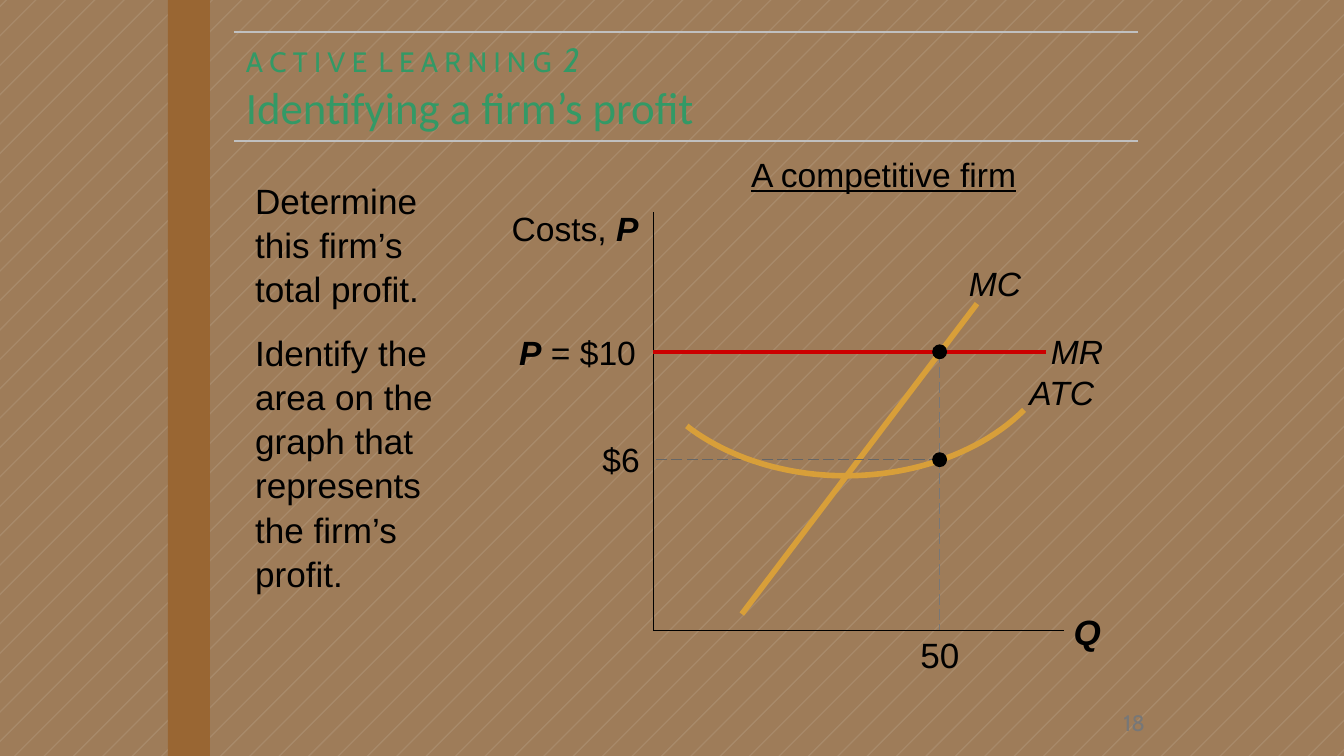
"""Build the slide on identifying a competitive firm's profit."""
from dataclasses import dataclass

from lxml import etree
from pptx import Presentation
from pptx.dml.color import RGBColor
from pptx.enum.dml import MSO_LINE
from pptx.enum.shapes import MSO_CONNECTOR, MSO_SHAPE
from pptx.enum.text import PP_ALIGN
from pptx.oxml.ns import qn
from pptx.slide import Slide
from pptx.util import Pt

STRAIGHT = MSO_CONNECTOR.STRAIGHT
RECTANGLE, OVAL = MSO_SHAPE.RECTANGLE, MSO_SHAPE.OVAL
LONG_DASH = MSO_LINE.LONG_DASH
LEFT, CENTER, RIGHT = PP_ALIGN.LEFT, PP_ALIGN.CENTER, PP_ALIGN.RIGHT

BACKGROUND = RGBColor(0x9E, 0x7C, 0x59)
WHITE = RGBColor(0xFF, 0xFF, 0xFF)
BROWN = RGBColor(0x99, 0x66, 0x33)
GREEN = RGBColor(0x33, 0x99, 0x66)
SILVER = RGBColor(0xC0, 0xC0, 0xC0)
BLACK = RGBColor(0, 0, 0)
GOLD = RGBColor(0xD8, 0x9F, 0x39)
RED = RGBColor(0xCC, 0, 0)
GRAY = RGBColor(0x77, 0x77, 0x77)
DARK_GRAY = RGBColor(0x66, 0x66, 0x66)

WIDTH, HEIGHT = 720, 405
STRIPE_START, STRIPE_STEP, STRIPE_COUNT = 3, 15.75, 72
AXIS_X, AXIS_Y = 350, 337.7
QUANTITY_X, PRICE_Y, COST_Y = 503.4, 188.5, 246.3
DOT_SIZE = 8


@dataclass
class Piece:
    text: str
    size: float = 18
    font: str = "Arial"
    color: RGBColor = BLACK
    bold: bool = False
    italic: bool = False
    underline: bool = False
    spacing: int = 0


@dataclass
class Label:
    left: float
    top: float
    width: float
    height: float
    paragraphs: list[list[Piece]]
    align: PP_ALIGN = LEFT
    inset_x: float = 0
    inset_y: float = 0
    line_spacing: float = 1
    gap: float = 0


@dataclass
class Line:
    start: tuple[float, float]
    end: tuple[float, float]
    color: RGBColor
    width: float
    dash: MSO_LINE | None = None


BODY = [
    "Determine\vthis firm’s\vtotal profit.",
    "Identify the area on the graph that represents\vthe firm’s profit.",
]
TITLE = [
    [Piece("A C T I V E", 15, "Cabin", GREEN), Piece(" ", 15, "Cabin", GREEN, spacing=270),
     Piece("L E A R N I N G", 15, "Cabin", GREEN), Piece(" ", 15, "Cabin", GREEN, spacing=270),
     Piece("2", 18, "Cabin", GREEN, italic=True)],
    [Piece("Identifying a firm’s profit", 24, "Calibri", GREEN)],
]
LABELS = [
    Label(124.6, 20.9, 484.6, 56.2, TITLE, inset_x=7.2),
    Label(129.6, 91.4, 123.8, 270, [[Piece(text, 18.8)] for text in BODY],
          inset_x=7.2, inset_y=3.6, line_spacing=1.05, gap=10.4),
    Label(568.1, 323.3, 31.7, 30.2, [[Piece("Q", 18.8, bold=True, italic=True)]],
          inset_x=7.2, inset_y=3.6),
    Label(250.6, 108, 98.6, 28.8, [[Piece("Costs, "), Piece("P", bold=True, italic=True)]],
          RIGHT, 7.2, 3.6),
    Label(519.1, 141.1, 36, 21.6, [[Piece("MC", italic=True)]]),
    Label(551.5, 199.4, 43.9, 21.6, [[Piece("ATC", italic=True)]]),
    Label(268.6, 174.2, 79.2, 28.8, [[Piece("P", bold=True, italic=True), Piece(" = $10")]],
          RIGHT, 7.2, 3.6),
    Label(563, 177.1, 36, 21.6, [[Piece("MR", italic=True)]]),
    Label(491, 339.1, 25.2, 23, [[Piece("50", 18.8)]], CENTER),
    Label(314.6, 235.4, 28.1, 21.6, [[Piece("$6")]], RIGHT),
    Label(380.9, 77.8, 185, 28.8, [[Piece("A competitive firm", underline=True)]],
          CENTER, 7.2, 3.6, 1.05),
    Label(583.4, 380, 30, 17, [[Piece("18", 12, "Cabin", GRAY)]], RIGHT),
]
LINES = [
    Line((125.3, 75.6), (609.8, 75.6), SILVER, 1),
    Line((125.3, 17.3), (609.8, 17.3), SILVER, 1),
    Line((AXIS_X, 113.8), (AXIS_X, AXIS_Y), BLACK, 0.75),
    Line((AXIS_X, AXIS_Y), (570.2, AXIS_Y), BLACK, 0.75),
    Line((397.4, 329), (523.4, 162.7), GOLD, 3),
    Line((AXIS_X, PRICE_Y), (560.2, PRICE_Y), RED, 2.25),
    Line((QUANTITY_X, PRICE_Y), (QUANTITY_X, AXIS_Y), GRAY, 0.75, LONG_DASH),
    Line((QUANTITY_X, COST_Y), (AXIS_X, COST_Y), DARK_GRAY, 0.75, LONG_DASH),
]
ATC_CURVE = [
    [(548.6, 219.6), (526.3, 241.9), (490.3, 254.9), (452.9, 254.9)],
    [(452.9, 254.9), (421.2, 254.9), (390.2, 245.5), (367.9, 228.2)],
]


def to_points(points: list[tuple[float, float]]) -> list[tuple[Pt, Pt]]:
    """Convert coordinates to lengths."""
    return [(Pt(x), Pt(y)) for x, y in points]


def stripe_edge(total: float) -> list[tuple[float, float]]:
    """Return the top and bottom ends of the diagonal x + y = total."""
    top = (min(total, WIDTH), max(0, total - WIDTH))
    bottom = (max(0, total - HEIGHT), min(total, HEIGHT))
    return [top, bottom]


def draw_stripes(slide: Slide) -> None:
    """Draw the faint diagonal stripes as one outline."""
    builder = None
    for index in range(STRIPE_COUNT):
        total = STRIPE_START + index * STRIPE_STEP
        corners = to_points(stripe_edge(total) + stripe_edge(total + 1)[::-1])
        if builder is None:
            builder = slide.shapes.build_freeform(*corners[0])
        else:
            builder.move_to(*corners[0])
        builder.add_line_segments(corners[1:], close=True)
    shape = builder.convert_to_shape()
    shape.shadow.inherit = False
    shape.line.fill.background()
    shape.fill.solid()
    shape.fill.fore_color.rgb = WHITE
    color = shape._element.spPr.find(qn("a:solidFill"))[0]
    etree.SubElement(color, qn("a:alpha"), val="10000")


def draw_solid(slide: Slide, kind: MSO_SHAPE, box: tuple[float, ...], color: RGBColor) -> None:
    """Draw a filled preset shape without an outline."""
    shape = slide.shapes.add_shape(kind, *(Pt(length) for length in box))
    shape.shadow.inherit = False
    shape.fill.solid()
    shape.fill.fore_color.rgb = color
    shape.line.fill.background()


def draw_line(slide: Slide, line: Line) -> None:
    """Draw a straight line."""
    start, end = to_points([line.start, line.end])
    connector = slide.shapes.add_connector(STRAIGHT, *start, *end)
    connector.line.color.rgb = line.color
    connector.line.width = Pt(line.width)
    if line.dash is not None:
        connector.line.dash_style = line.dash
    etree.SubElement(connector._element.spPr, qn("a:effectLst"))


def bezier(controls: list[tuple[float, float]], t: float) -> tuple[float, float]:
    """Return the point of a cubic curve at t."""
    weights = ((1 - t) ** 3, 3 * t * (1 - t) ** 2, 3 * t**2 * (1 - t), t**3)
    x, y = (sum(w * v for w, v in zip(weights, axis)) for axis in zip(*controls))
    return x, y


def draw_curve(slide: Slide, segments: list[list[tuple[float, float]]], color: RGBColor) -> None:
    """Draw joined cubic segments as an open outline."""
    steps = 24
    points = to_points([bezier(controls, step / steps)
                        for controls in segments for step in range(steps + 1)])
    builder = slide.shapes.build_freeform(*points[0])
    builder.add_line_segments(points[1:], close=False)
    shape = builder.convert_to_shape()
    shape.shadow.inherit = False
    shape.fill.background()
    shape.line.color.rgb = color
    shape.line.width = Pt(3)


def draw_label(slide: Slide, label: Label) -> None:
    """Draw a text box with formatted runs."""
    box = (label.left, label.top, label.width, label.height)
    frame = slide.shapes.add_textbox(*(Pt(length) for length in box)).text_frame
    frame.word_wrap = True
    frame.margin_left = frame.margin_right = Pt(label.inset_x)
    frame.margin_top = frame.margin_bottom = Pt(label.inset_y)
    frame.text = "\n".join("" for _ in label.paragraphs)
    for index, (paragraph, pieces) in enumerate(zip(frame.paragraphs, label.paragraphs)):
        paragraph.alignment = label.align
        paragraph.line_spacing = label.line_spacing
        if index:
            paragraph.space_before = Pt(label.gap)
        for piece in pieces:
            known = len(paragraph.runs)
            for part, text in enumerate(piece.text.split("\v")):
                if part:
                    paragraph.add_line_break()
                paragraph.add_run().text = text
            for run in paragraph.runs[known:]:
                font = run.font
                font.name, font.size, font.color.rgb = piece.font, Pt(piece.size), piece.color
                font.bold, font.italic, font.underline = piece.bold, piece.italic, piece.underline
                if piece.spacing:
                    run._r.get_or_add_rPr().set("spc", str(piece.spacing))


def main() -> None:
    """Build and save the presentation."""
    presentation = Presentation()
    presentation.slide_width, presentation.slide_height = Pt(WIDTH), Pt(HEIGHT)
    slide = presentation.slides.add_slide(presentation.slide_layouts[6])
    slide.background.fill.solid()
    slide.background.fill.fore_color.rgb = BACKGROUND
    draw_stripes(slide)
    draw_solid(slide, RECTANGLE, (90, 0, 22.5, HEIGHT), BROWN)
    for line in LINES:
        draw_line(slide, line)
    draw_curve(slide, ATC_CURVE, GOLD)
    for y in (PRICE_Y, COST_Y):
        corner = (QUANTITY_X - DOT_SIZE / 2, y - DOT_SIZE / 2)
        draw_solid(slide, OVAL, (*corner, DOT_SIZE, DOT_SIZE), BLACK)
    for label in LABELS:
        draw_label(slide, label)
    presentation.save("out.pptx")


if __name__ == "__main__":
    main()
